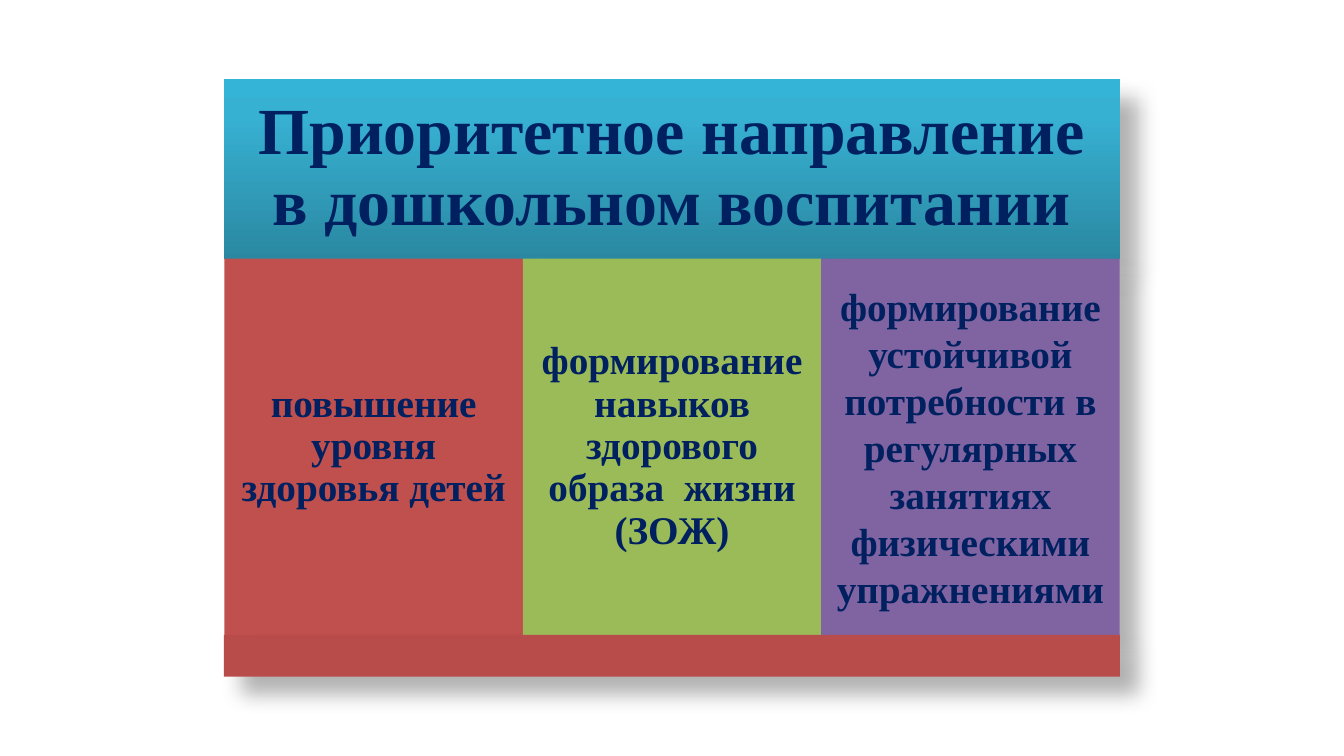
from copy import deepcopy
from dataclasses import dataclass

from lxml import etree
from pptx import Presentation
from pptx import util as u
from pptx.dml.color import RGBColor
from pptx.enum import shapes, text
from pptx.oxml import ns

Pt = u.Pt


@dataclass(frozen=True)
class Theme:
    font: str = "Times New Roman"
    ink: str = "002060"
    title_size: int = 47
    body_size: int = 28
    header: tuple = ((0, "2A88A2"), (0.8, "37B1D2"), (1, "34B4D6"))
    columns: tuple = ("C0504D", "9BBB59", "8064A2")
    footer: str = "B74C4A"
    shadow: str = "000000"


THEME = Theme()
LEFT, TOP, WIDTH = 160, 56.67, 640
HEADER_H, COLUMN_H, FOOTER_H = 128, 268.8, 29.87
COLUMN_INSET = 0.31

COLUMNS = (
    (("повышение уровня здоровья детей",), 0.9),
    (("формирование навыков здорового образа  жизни (ЗОЖ)",), 0.9),
    (("формирование",
      "устойчивой потребности в регулярных занятиях физическими упражнениями"), 1.0),
)


def place(s, left, top, width, height):
    s.left, s.top, s.width, s.height = map(Pt, (left, top, width, height))


def add_shadow(s):
    s.shadow.inherit = False
    effects = s._element.spPr.find(ns.qn("a:effectLst"))
    shadow = etree.SubElement(
        effects, ns.qn("a:outerShdw"), blurRad=str(Pt(15)), dist=str(Pt(18)),
        dir="2700000", algn="tl", rotWithShape="0")
    color = etree.SubElement(shadow, ns.qn("a:srgbClr"), val=THEME.shadow)
    etree.SubElement(color, ns.qn("a:alpha"), val="30000")


def fill_gradient(s, stops):
    s.fill.gradient()
    s.fill.gradient_angle = 90
    stop_list = s._element.spPr.find(".//" + ns.qn("a:gsLst"))
    stop_list.append(deepcopy(stop_list[-1]))
    for stop, (position, color) in zip(s.fill.gradient_stops, stops):
        stop.position = position
        stop.color.rgb = RGBColor.from_string(color)


def write(s, paragraphs, size, inset, spacing):
    tf = s.text_frame
    tf.word_wrap = True
    tf.auto_size = text.MSO_AUTO_SIZE.NONE
    tf.vertical_anchor = text.MSO_ANCHOR.MIDDLE
    tf.margin_left = tf.margin_right = tf.margin_top = tf.margin_bottom = Pt(inset)
    tf.text = "\n".join(paragraphs)
    for p in tf.paragraphs:
        p.alignment = text.PP_ALIGN.CENTER
        p.line_spacing = spacing
        p.space_before = Pt(0)
        p.font.name = THEME.font
        p.font.size = Pt(size)
        p.font.bold = True
        p.font.color.rgb = RGBColor.from_string(THEME.ink)


def add_header(slide):
    s = slide.shapes.title
    place(s, LEFT, TOP, WIDTH, HEADER_H)
    fill_gradient(s, THEME.header)
    add_shadow(s)
    write(s, ("Приоритетное направление в дошкольном воспитании",),
          THEME.title_size, 14.4, 0.9)


def add_block(slide, left, top, width, height, color):
    s = slide.shapes.add_shape(
        shapes.MSO_SHAPE.RECTANGLE, *map(Pt, (left, top, width, height)))
    s.fill.solid()
    s.fill.fore_color.rgb = RGBColor.from_string(color)
    s.line.fill.background()
    add_shadow(s)
    return s


def add_columns(slide):
    width = (WIDTH - 2 * COLUMN_INSET) / len(COLUMNS)
    for i, ((paragraphs, spacing), color) in enumerate(zip(COLUMNS, THEME.columns)):
        s = add_block(slide, LEFT + COLUMN_INSET + i * width, TOP + HEADER_H,
                      width, COLUMN_H, color)
        write(s, paragraphs, THEME.body_size, 8.4, spacing)


def main():
    prs = Presentation()
    prs.slide_width, prs.slide_height = Pt(960), Pt(540)
    slide = prs.slides.add_slide(prs.slide_layouts[5])
    add_header(slide)
    add_columns(slide)
    add_block(slide, LEFT, TOP + HEADER_H + COLUMN_H, WIDTH, FOOTER_H, THEME.footer)
    prs.save("out.pptx")


if __name__ == "__main__":
    main()
